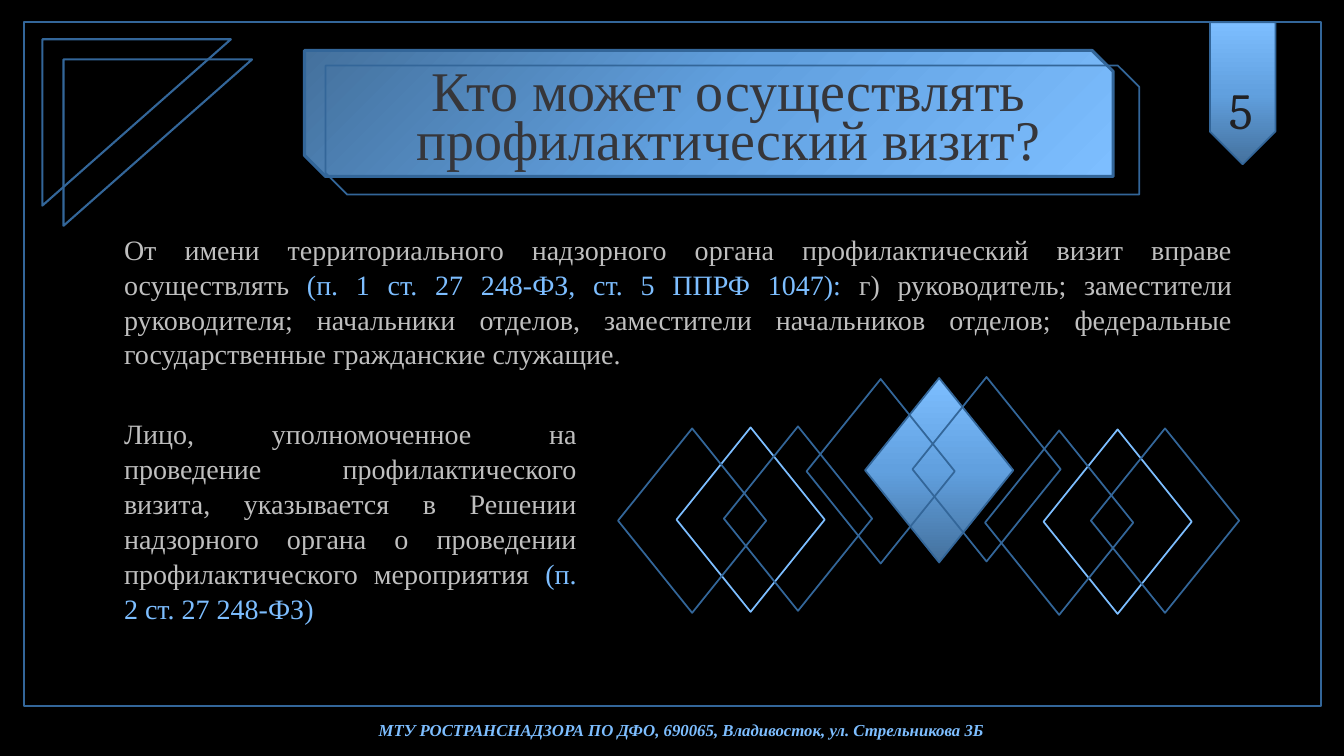
from copy import deepcopy

from lxml import etree
from pptx import Presentation
from pptx.dml.color import RGBColor
from pptx.enum.shapes import MSO_SHAPE
from pptx.enum.text import MSO_ANCHOR, MSO_AUTO_SIZE, PP_ALIGN
from pptx.oxml.ns import qn
from pptx.util import Pt

PX = 9144  # 100 px to the inch
RECTANGLE = MSO_SHAPE.RECTANGLE
TRIANGLE = MSO_SHAPE.RIGHT_TRIANGLE
RIBBON = MSO_SHAPE.PENTAGON
BANNER = MSO_SHAPE.SNIP_2_DIAG_RECTANGLE
DIAMOND = MSO_SHAPE.FLOWCHART_DECISION
TOP = MSO_ANCHOR.TOP
NO_AUTOFIT = MSO_AUTO_SIZE.NONE
LEFT, CENTER, JUSTIFY = PP_ALIGN.LEFT, PP_ALIGN.CENTER, PP_ALIGN.JUSTIFY

BLACK = RGBColor(0x00, 0x00, 0x00)
STEEL = RGBColor(0x33, 0x66, 0x99)
SKY = RGBColor(0x7D, 0xBE, 0xFF)
BLUE = RGBColor(0x61, 0xA0, 0xDF)
DEEP_BLUE = RGBColor(0x44, 0x71, 0x9D)
GRAY = RGBColor(0xBF, 0xBF, 0xBF)
TITLE_INK = RGBColor(0x36, 0x36, 0x3A)
NUMBER_INK = RGBColor(0x21, 0x21, 0x23)


def place(shape, left, top, width, height):
    shape.left, shape.top = left * PX, top * PX
    shape.width, shape.height = width * PX, height * PX


def fill_gradient(shape, angle):
    """Fill from deep blue to sky; the angle runs counterclockwise."""
    shape.fill.gradient()
    shape.fill.gradient_angle = angle
    stops = shape.fill.gradient_stops
    first = shape._element.spPr.find(".//" + qn("a:gs"))
    first.addnext(deepcopy(first))
    stops = shape.fill.gradient_stops
    for stop, position, color in zip(stops, (0, 0.5, 1), (DEEP_BLUE, BLUE, SKY)):
        stop.position = position
        stop.color.rgb = color


def add_figure(slide, kind, box, weight=1.25, line=STEEL, rotation=0, gradient=None):
    figure = slide.shapes.add_shape(kind, *(length * PX for length in box))
    figure.shadow.inherit = False
    figure.rotation = rotation
    figure.line.color.rgb = line
    figure.line.width = Pt(weight)
    if gradient is None:
        figure.fill.background()
    else:
        fill_gradient(figure, gradient)
    return figure


def write_text(holder, runs, size, align=LEFT, font="Times New Roman",
               spacing=1.0, bold=False, italic=False, wrap=True):
    frame = holder.text_frame
    frame.word_wrap = wrap
    frame.auto_size = NO_AUTOFIT
    frame.vertical_anchor = TOP
    paragraph = frame.paragraphs[0]
    paragraph.alignment = align
    paragraph.line_spacing = spacing
    paragraph.space_before = Pt(0)
    for text, color in runs:
        run = paragraph.add_run()
        run.text = text
        run.font.name = font
        run.font.size = Pt(size)
        run.font.bold = bold
        run.font.italic = italic
        run.font.color.rgb = color


def fill_placeholder(slide, index, box, runs, **text_format):
    """Move a placeholder to the front and fill it without a bullet."""
    holder = slide.placeholders[index]
    slide.shapes._spTree.append(holder._element)
    place(holder, *box)
    write_text(holder, runs, **text_format)
    properties = holder.text_frame.paragraphs[0]._p.get_or_add_pPr()
    properties.set("marL", "0")
    properties.set("indent", "0")
    etree.SubElement(properties, qn("a:buNone"))


def add_label(slide, box, runs, **text_format):
    label = slide.shapes.add_textbox(*(length * PX for length in box))
    write_text(label, runs, **text_format)


def add_diamond_trio(slide, left, top, center_line=SKY, center_gradient=None):
    def diamond(dx, dy, **style):
        add_figure(slide, DIAMOND, (left + dx, top + dy, 183, 147),
                   rotation=270, **style)

    diamond(58, -1, line=center_line, gradient=center_gradient)
    diamond(0, 0)
    diamond(105, -2)


def main():
    deck = Presentation()
    deck.slide_width, deck.slide_height = 1333 * PX, 750 * PX
    slide = deck.slides.add_slide(deck.slide_layouts[3])
    slide.background.fill.solid()
    slide.background.fill.fore_color.rgb = BLACK

    # Frame and footer
    add_figure(slide, RECTANGLE, (24, 22, 1286, 678), weight=1.5)
    add_label(slide, (223, 713, 906, 26),
              [("МТУ РОСТРАНСНАДЗОРА ПО ДФО, 690065, Владивосток, ул. Стрельникова 3Б", SKY)],
              size=12, align=CENTER, spacing=0.8, bold=True, italic=True)

    # Corner triangles
    for left, top in ((42, 39), (63, 59)):
        corner = add_figure(slide, TRIANGLE, (left, top, 187, 165), weight=1.5)
        corner._element.spPr.xfrm.set("flipV", "1")

    # Page number ribbon
    add_figure(slide, RIBBON, (1162, 60, 141, 65), rotation=90, gradient=180)
    add_label(slide, (1209, 74, 48, 71), [("5", NUMBER_INK)],
              size=36, font="Cambria", wrap=False)

    # Title on its banner
    add_figure(slide, BANNER, (302, 50, 802, 125), weight=2.25, gradient=315)
    fill_placeholder(slide, 0, (328, 68, 789, 108),
                     [("Кто может осуществлять профилактический визит?", TITLE_INK)],
                     size=40, align=CENTER, spacing=Pt(35))
    add_figure(slide, BANNER, (323, 65, 807, 128))

    # Body text
    body_format = {"size": 20, "align": JUSTIFY, "spacing": 1.04}
    fill_placeholder(slide, 1, (113, 224, 1119, 145), [
        ("От имени территориального надзорного органа профилактический визит "
         "вправе осуществлять ", GRAY),
        ("(п. 1 ст. 27 248-ФЗ, ст. 5 ППРФ 1047): ", SKY),
        ("г) руководитель; заместители руководителя; начальники отделов, "
         "заместители начальников отделов; федеральные государственные "
         "гражданские служащие. ", GRAY),
    ], **body_format)
    fill_placeholder(slide, 2, (113, 407, 469, 212), [
        ("Лицо, уполномоченное на проведение профилактического визита, "
         "указывается в Решении надзорного органа о проведении "
         "профилактического мероприятия ", GRAY),
        ("(п. 2 ст. 27 248-ФЗ)", SKY),
    ], **body_format)

    # Diamond ornament
    add_diamond_trio(slide, 595, 443)
    add_diamond_trio(slide, 959, 445)
    add_diamond_trio(slide, 782, 394, center_line=STEEL, center_gradient=0)

    deck.save("out.pptx")


if __name__ == "__main__":
    main()
